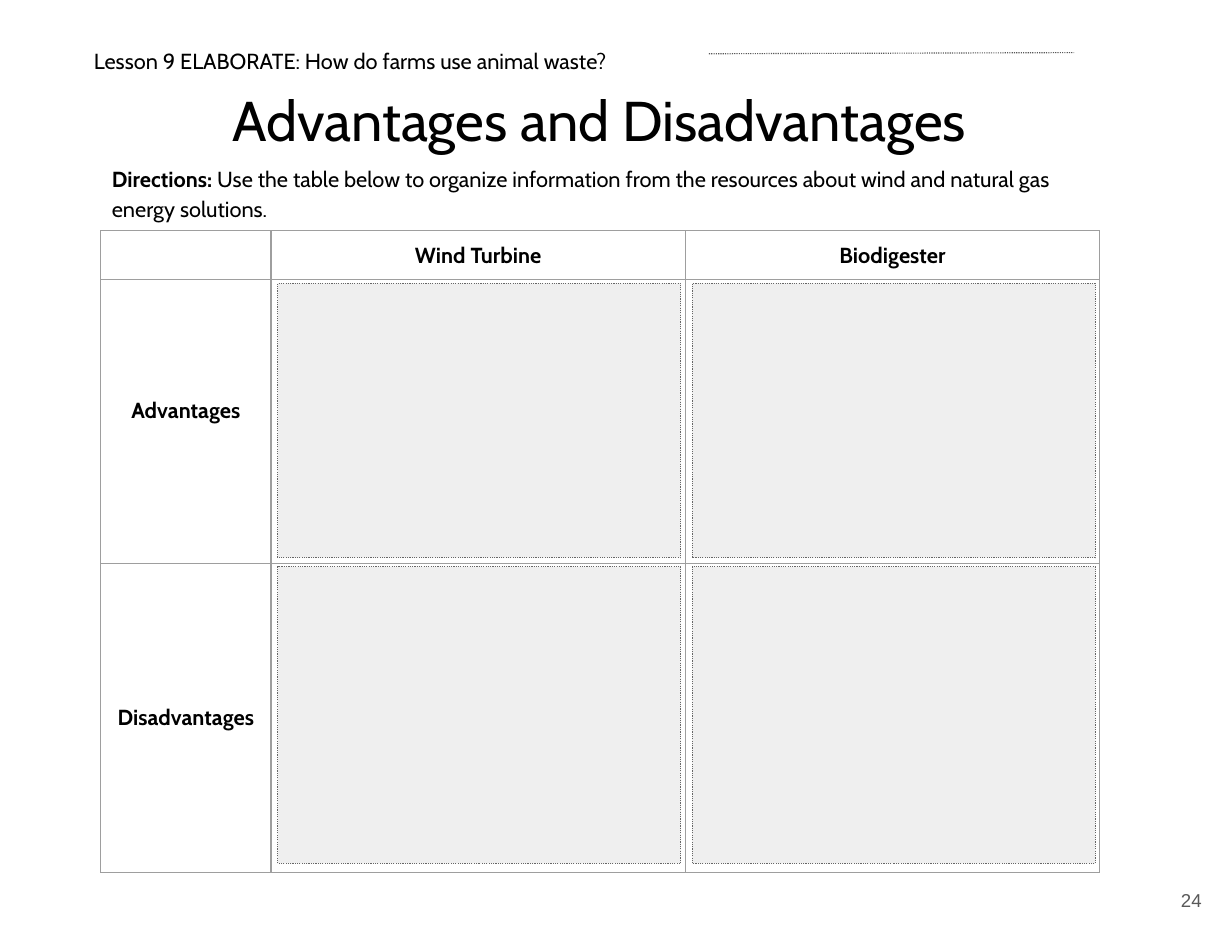
from lxml import etree
from pptx import Presentation
from pptx import util as u
from pptx.dml.color import RGBColor
from pptx.enum import dml, shapes, text
from pptx.oxml import ns

COLORS = {"ink": "000000", "grid": "9E9E9E", "dots": "666666",
          "muted": "595959", "answer": "EFEFEF"}
FONT = "Cabin"
TABLE_LEFT, TABLE_TOP = 0.9, 2.06
COLUMNS = [1.52, 3.7, 3.7]
ROWS = [0.44, 2.53, 2.76]
ANSWER_WIDTH, ANSWER_HEIGHTS = 3.6, [2.45, 2.65]
ANSWER_OFFSET = (0.06, 0.03)


def color(name):
    return RGBColor.from_string(COLORS[name])


def write(frame, spans, size=14, font=FONT, ink="ink", align=text.PP_ALIGN.LEFT,
          anchor=text.MSO_ANCHOR.MIDDLE, spacing=None, inset=0.1):
    """Fill a frame with one paragraph of (text, bold) spans."""
    frame.word_wrap = True
    frame.vertical_anchor = anchor
    for side in ("left", "top", "right", "bottom"):
        setattr(frame, f"margin_{side}", u.Inches(inset))
    para = frame.paragraphs[0]
    para.alignment = align
    if spacing:
        para.line_spacing = spacing
    for words, bold in spans:
        span = para.add_run()
        span.text = words
        span.font.name, span.font.size, span.font.bold = font, u.Pt(size), bold
        span.font.color.rgb = color(ink)


def add_text(page, place, spans, **style):
    box = page.shapes.add_textbox(*map(u.Inches, place))
    write(box.text_frame, spans, **style)


def add_title(page, place, words):
    title = page.shapes.title
    title.left, title.top, title.width, title.height = map(u.Inches, place)
    write(title.text_frame, [(words, False)], size=36, spacing=1.15,
          align=text.PP_ALIGN.CENTER, anchor=text.MSO_ANCHOR.TOP)
    title.text_frame.auto_size = text.MSO_AUTO_SIZE.NONE


def dot_line(line, name):
    line.color.rgb = color(name)
    line.width = u.Pt(0.75)
    line.dash_style = dml.MSO_LINE.ROUND_DOT


def add_name_line(page, start, end):
    line = page.shapes.add_connector(shapes.MSO_CONNECTOR.STRAIGHT,
                                     *map(u.Inches, start + end))
    dot_line(line.line, "muted")
    etree.SubElement(line._element.spPr, ns.qn("a:effectLst"))


def border_cell(cell):
    properties = cell._tc.get_or_add_tcPr()
    for position, side in enumerate(("lnL", "lnR", "lnT", "lnB")):
        edge = etree.Element(ns.qn(f"a:{side}"), w=str(u.Pt(0.75)))
        fill = etree.SubElement(edge, ns.qn("a:solidFill"))
        etree.SubElement(fill, ns.qn("a:srgbClr"), val=COLORS["grid"])
        properties.insert(position, edge)


def add_comparison(page, labels):
    frame = page.shapes.add_table(
        len(ROWS), len(COLUMNS), u.Inches(TABLE_LEFT), u.Inches(TABLE_TOP),
        u.Inches(sum(COLUMNS)), u.Inches(sum(ROWS)))
    table = frame.table
    table.first_row = table.horz_banding = False
    for column, width in zip(table.columns, COLUMNS):
        column.width = u.Inches(width)
    for row, height in zip(table.rows, ROWS):
        row.height = u.Inches(height)
    for cell in table.iter_cells():
        cell.fill.background()
        border_cell(cell)
    for (row, column), words in labels.items():
        cell = table.cell(row, column)
        write(cell.text_frame, [(words, True)], align=text.PP_ALIGN.CENTER)
        cell.vertical_anchor = text.MSO_ANCHOR.MIDDLE
        cell.margin_left = cell.margin_right = u.Inches(0.1)
        cell.margin_top = cell.margin_bottom = u.Inches(0.1)
    table.cell(1, 0).margin_bottom = u.Inches(0.3)


def add_answer_boxes(page):
    """Lay one dotted writing area over each empty body cell."""
    for row, height in enumerate(ANSWER_HEIGHTS, start=1):
        for column in (1, 2):
            left = TABLE_LEFT + sum(COLUMNS[:column]) + ANSWER_OFFSET[0]
            top = TABLE_TOP + sum(ROWS[:row]) + ANSWER_OFFSET[1]
            box = page.shapes.add_shape(
                shapes.MSO_SHAPE.RECTANGLE,
                *map(u.Inches, (left, top, ANSWER_WIDTH, height)))
            box.shadow.inherit = False
            box.fill.solid()
            box.fill.fore_color.rgb = color("answer")
            dot_line(box.line, "dots")


def main():
    deck = Presentation()
    deck.slide_width, deck.slide_height = u.Inches(11), u.Inches(8.5)
    page = deck.slides.add_slide(deck.slide_layouts[5])

    add_text(page, (0.74, 0.25, 5.53, 0.56),
             [("Lesson 9 ELABORATE: How do farms use animal waste?", False)],
             spacing=1.15)
    add_name_line(page, (6.33, 0.48), (9.59, 0.47))
    add_title(page, (0.74, 0.57, 9.22, 0.81), "Advantages and Disadvantages")
    add_comparison(page, {(0, 1): "Wind Turbine", (0, 2): "Biodigester",
                          (1, 0): "Advantages", (2, 0): "Disadvantages"})
    add_text(page, (TABLE_LEFT, 1.5, sum(COLUMNS), 0.43),
             [("Directions: ", True),
              ("Use the table below to organize information from the resources "
               "about wind and natural gas energy solutions.", False)],
             spacing=1.15)
    add_text(page, (10.19, 7.71, 0.66, 0.65), [("24", False)], size=12,
             font="Arial", ink="muted", align=text.PP_ALIGN.RIGHT, inset=0.12)
    add_answer_boxes(page)
    deck.save("out.pptx")


if __name__ == "__main__":
    main()
